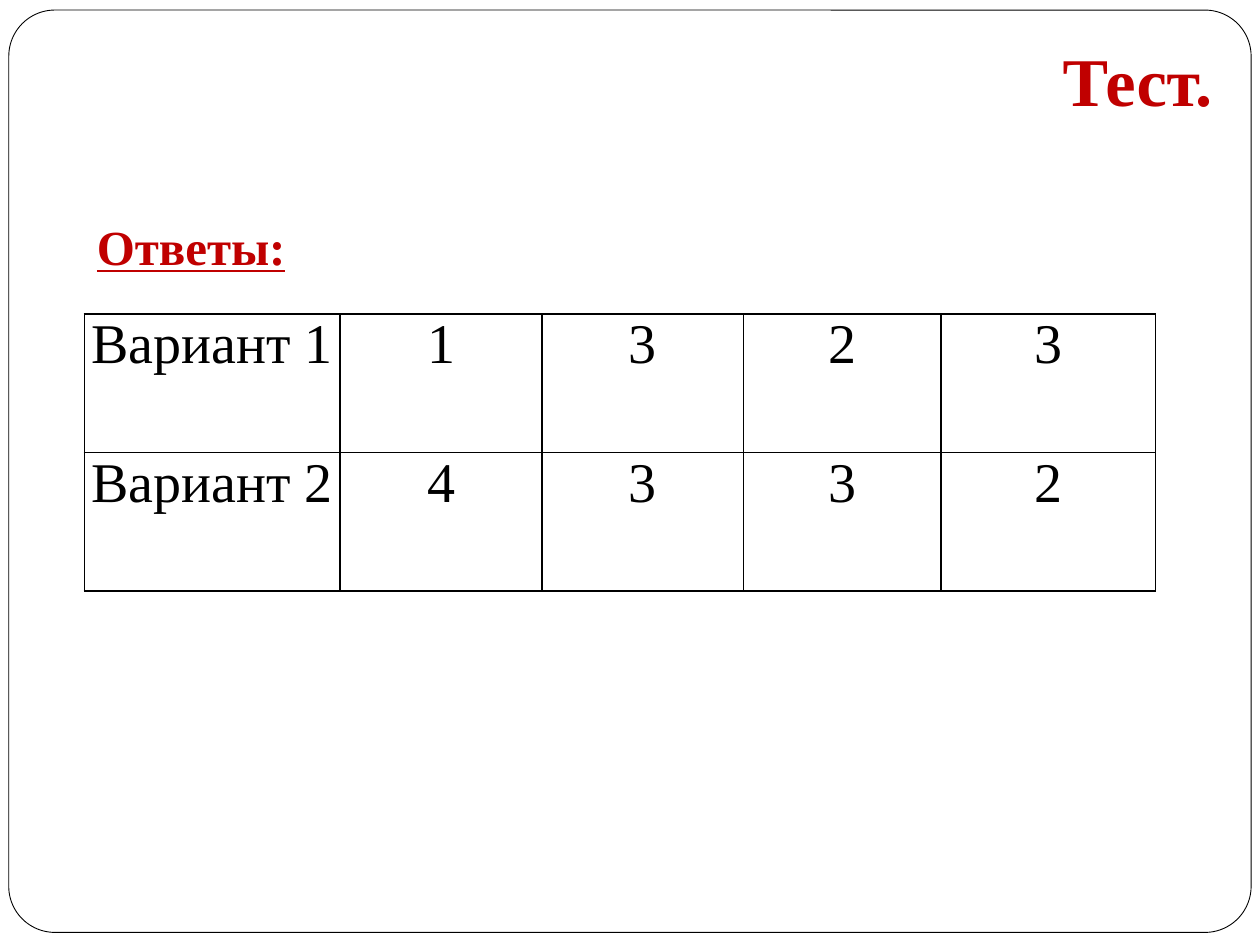
from pptx import Presentation
from pptx.dml.color import RGBColor
from pptx.enum import shapes, text
from pptx.oxml import parse_xml
from pptx.oxml.ns import nsdecls
from pptx.util import Inches, Pt

FONT = "Times New Roman"
RED = "C00000"
BLACK = "000000"
WHITE = "FFFFFF"
ANSWERS = [
    ["Вариант 1", "1", "3", "2", "3"],
    ["Вариант 2", "4", "3", "3", "2"],
]
COL_WIDTHS = [2.03, 1.6, 1.6, 1.57, 1.7]
ROW_HEIGHT = 1.1


def rgb(value):
    """Turn a hex string into a colour."""
    return RGBColor.from_string(value)


def style(p, size, color, align, bold=False, underline=False):
    """Set the alignment and font of a paragraph."""
    p.alignment = align
    f = p.font
    f.name, f.size, f.bold, f.underline = FONT, Pt(size), bold, underline
    f.color.rgb = rgb(color)


def add_frame(s):
    """Draw the rounded frame around the slide."""
    sp = s.shapes.add_shape(shapes.MSO_SHAPE.ROUNDED_RECTANGLE, Inches(0.07),
                            Inches(0.08), Inches(9.86), Inches(7.32))
    sp.adjustments[0] = 0.05
    sp.shadow.inherit = False
    sp.fill.solid()
    sp.fill.fore_color.rgb = rgb(WHITE)
    sp.line.color.rgb = rgb(BLACK)
    sp.line.width = Pt(0.5)


def add_heading(s, content, box, size, align, anchor, underline=False):
    """Add a bold red heading and return its text frame."""
    tf = s.shapes.add_textbox(*map(Inches, box)).text_frame
    tf.word_wrap = True
    tf.vertical_anchor = anchor
    p = tf.paragraphs[0]
    p.text = content
    style(p, size, RED, align, bold=True, underline=underline)
    return tf


def set_borders(cell):
    """Give a cell thin black borders on all sides."""
    tcPr = cell._tc.get_or_add_tcPr()
    for i, side in enumerate(("lnL", "lnR", "lnT", "lnB")):
        tcPr.insert(i, parse_xml(
            f'<a:{side} {nsdecls("a")} w="{Pt(1)}"><a:solidFill>'
            f'<a:srgbClr val="{BLACK}"/></a:solidFill></a:{side}>'))


def fill_cell(cell, content):
    """Write centred text into a bordered cell without margins."""
    cell.margin_left = cell.margin_right = 0
    cell.margin_top = cell.margin_bottom = 0
    cell.fill.background()
    set_borders(cell)
    p = cell.text_frame.paragraphs[0]
    p.text = content
    style(p, 32, BLACK, text.PP_ALIGN.CENTER)


def add_answers(s):
    """Add the table of answers for each variant."""
    table = s.shapes.add_table(
        len(ANSWERS), len(COL_WIDTHS), Inches(0.67), Inches(2.49),
        Inches(sum(COL_WIDTHS)), Inches(ROW_HEIGHT * len(ANSWERS))).table
    table.first_row = table.horz_banding = False
    for col, width in zip(table.columns, COL_WIDTHS):
        col.width = Inches(width)
    for row, values in zip(table.rows, ANSWERS):
        row.height = Inches(ROW_HEIGHT)
        for cell, value in zip(row.cells, values):
            fill_cell(cell, value)


def main():
    """Build and save the slide."""
    prs = Presentation()
    prs.slide_width, prs.slide_height = Inches(10), Inches(7.5)
    s = prs.slides.add_slide(prs.slide_layouts[6])
    add_frame(s)
    add_heading(s, "Тест.", (1.22, 0.21, 8.5, 0.79), 39,
                text.PP_ALIGN.RIGHT, text.MSO_ANCHOR.BOTTOM)
    add_answers(s)
    tf = add_heading(s, "Ответы:", (0.67, 1.62, 2.83, 0.88), 28,
                     text.PP_ALIGN.LEFT, text.MSO_ANCHOR.TOP, underline=True)
    tf.margin_top = Inches(0.1)
    prs.save("out.pptx")


if __name__ == "__main__":
    main()
